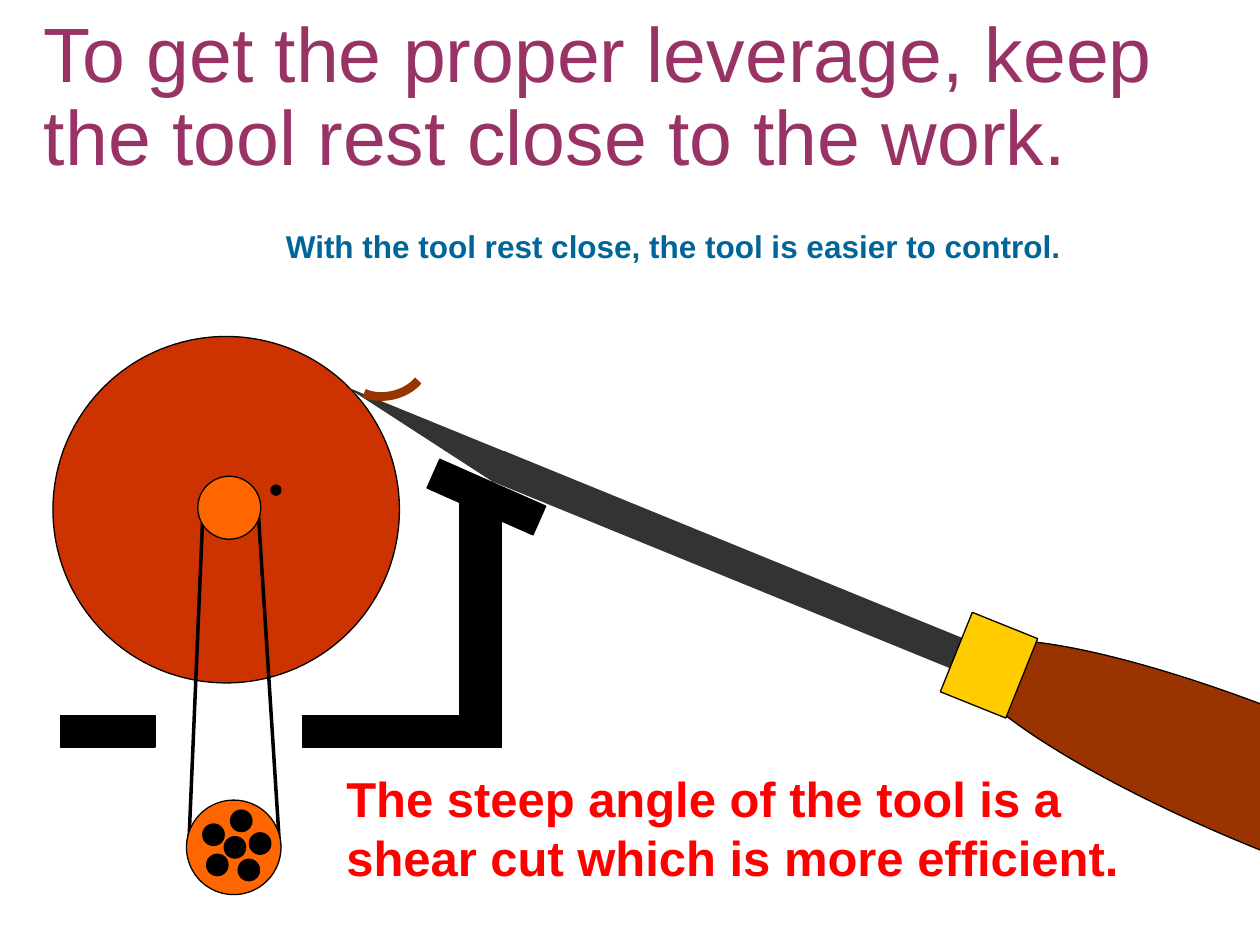
from dataclasses import dataclass
from typing import Sequence

from lxml.etree import SubElement
from pptx import Presentation
from pptx.dml.color import RGBColor
from pptx.enum.shapes import MSO_CONNECTOR as Connector, MSO_SHAPE as Preset
from pptx.enum.text import MSO_AUTO_SIZE as AutoSize, PP_ALIGN as Align
from pptx.oxml.ns import qn
from pptx.util import Emu, Pt

PX = 9144  # EMU in one px, 100 px to the inch


@dataclass(frozen=True)
class Theme:
    font: str = "Arial"
    title: str = "993366"
    control_note: str = "006699"
    angle_note: str = "FF0000"
    black: str = "000000"
    wood: str = "CC3300"
    pulley: str = "FF6600"
    steel: str = "333333"
    handle: str = "993300"
    ferrule: str = "FFCC00"
    title_size: int = 44
    angle_size: int = 28
    control_size: int = 18
    outline: float = 0.75
    belt: int = 2
    shaving: int = 5


THEME = Theme()


@dataclass(frozen=True)
class Part:
    preset: Preset
    left: int
    top: int
    width: int
    height: int
    fill: str
    rotation: float = 0
    outlined: bool = True


@dataclass(frozen=True)
class Belt:
    start: tuple[int, int]
    end: tuple[int, int]


@dataclass(frozen=True)
class Caption:
    words: str
    left: int
    top: int
    width: int
    height: int
    size: int
    color: str
    bold: bool = True
    line_spacing: float = 1.0


def px(length: float) -> Emu:
    return Emu(round(length * PX))


def rgb(color: str) -> RGBColor:
    return RGBColor.from_string(color)


def disc(center_x: int, center_y: int, size: int, fill: str) -> Part:
    """A circle placed by its centre."""
    return Part(Preset.OVAL, center_x - size // 2, center_y - size // 2, size, size, fill)


def draw_part(shapes, part: Part) -> None:
    shape = shapes.add_shape(
        part.preset, px(part.left), px(part.top), px(part.width), px(part.height)
    )
    shape.shadow.inherit = False
    shape.rotation = part.rotation
    shape.fill.solid()
    shape.fill.fore_color.rgb = rgb(part.fill)
    if part.outlined:
        shape.line.color.rgb = rgb(THEME.black)
        shape.line.width = Pt(THEME.outline)
    else:
        shape.line.fill.background()


def draw_assembly(shapes, parts: Sequence[Part]) -> None:
    """Draw the parts from back to front in one group."""
    group = shapes.add_group_shape()
    for part in parts:
        draw_part(group.shapes, part)


def draw_belt(shapes, belt: Belt) -> None:
    line = shapes.add_connector(
        Connector.STRAIGHT, *(px(value) for value in belt.start + belt.end)
    )
    line.line.color.rgb = rgb(THEME.black)
    line.line.width = Pt(THEME.belt)
    SubElement(line._element.spPr, qn("a:effectLst"))


def bezier(controls: Sequence[tuple[int, int]], steps: int) -> list[tuple[Emu, Emu]]:
    """Points along a cubic curve, in EMU."""
    points = []
    for step in range(steps + 1):
        t = step / steps
        weights = ((1 - t) ** 3, 3 * t * (1 - t) ** 2, 3 * t**2 * (1 - t), t**3)
        x, y = (sum(w * c for w, c in zip(weights, axis)) for axis in zip(*controls))
        points.append((px(x), px(y)))
    return points


def draw_shaving(shapes, controls: Sequence[tuple[int, int]]) -> None:
    start, *rest = bezier(controls, steps=16)
    builder = shapes.build_freeform(*start)
    builder.add_line_segments(rest, close=False)
    shaving = builder.convert_to_shape()
    shaving.shadow.inherit = False
    shaving.fill.background()
    shaving.line.color.rgb = rgb(THEME.handle)
    shaving.line.width = Pt(THEME.shaving)


def draw_caption(shapes, caption: Caption) -> None:
    box = shapes.add_textbox(
        px(caption.left), px(caption.top), px(caption.width), px(caption.height)
    )
    frame = box.text_frame
    frame.word_wrap = True
    frame.auto_size = AutoSize.SHAPE_TO_FIT_TEXT
    frame.text = caption.words
    paragraph = frame.paragraphs[0]
    paragraph.alignment = Align.LEFT
    paragraph.line_spacing = caption.line_spacing
    font = paragraph.runs[0].font
    font.name = THEME.font
    font.size = Pt(caption.size)
    font.bold = caption.bold
    font.color.rgb = rgb(caption.color)


TILT = 22.2
WORKPIECE = (
    Part(Preset.OVAL, 42, 267, 275, 275, THEME.wood),
    disc(219, 389, 8, THEME.black),
)
TOOL = (
    Part(Preset.RIGHT_TRIANGLE, 265, 332, 137, 26, THEME.steel, TILT + 180, False),
    Part(Preset.RECTANGLE, 380, 433, 403, 26, THEME.steel, TILT, False),
    Part(Preset.OVAL, 743, 568, 542, 108, THEME.handle, TILT),
    Part(Preset.RECTANGLE, 757, 494, 56, 68, THEME.ferrule, 21.9),
)
BELTS = (Belt((161, 408), (150, 667)), Belt((205, 407), (222, 673)))
HUB = disc(182, 403, 50, THEME.pulley)
HOLE_CENTERS = ((186, 672), (197, 690), (191, 651), (172, 686), (169, 662), (206, 669))
MOTOR_PULLEY = (
    Part(Preset.OVAL, 148, 635, 75, 75, THEME.pulley),
    *(disc(x, y, 17, THEME.black) for x, y in HOLE_CENTERS),
)
TOOL_REST = (
    Part(Preset.RECTANGLE, 365, 393, 33, 175, THEME.black),
    Part(Preset.RECTANGLE, 340, 382, 92, 25, THEME.black, 23.9),
    Part(Preset.RECTANGLE, 240, 568, 158, 25, THEME.black),
    Part(Preset.RECTANGLE, 48, 568, 75, 25, THEME.black),
)
SHAVING = ((289, 312), (302, 318), (322, 314), (332, 302))
CAPTIONS = (
    Caption("To get the proper leverage, keep the tool rest close to the work.",
            25, 8, 925, 142, THEME.title_size, THEME.title, False, 0.9),
    Caption("The steep angle of the tool is a shear cut which is more efficient.",
            265, 605, 675, 103, THEME.angle_size, THEME.angle_note),
    Caption("With the tool rest close, the tool is easier to control.",
            217, 175, 725, 40, THEME.control_size, THEME.control_note),
)


def main() -> None:
    deck = Presentation()
    deck.slide_width, deck.slide_height = px(1000), px(750)
    shapes = deck.slides.add_slide(deck.slide_layouts[6]).shapes
    draw_assembly(shapes, WORKPIECE)
    draw_assembly(shapes, TOOL)
    for belt in BELTS:
        draw_belt(shapes, belt)
    draw_part(shapes, HUB)
    draw_assembly(shapes, MOTOR_PULLEY)
    draw_assembly(shapes, TOOL_REST)
    draw_shaving(shapes, SHAVING)
    for caption in CAPTIONS:
        draw_caption(shapes, caption)
    deck.save("out.pptx")


if __name__ == "__main__":
    main()
